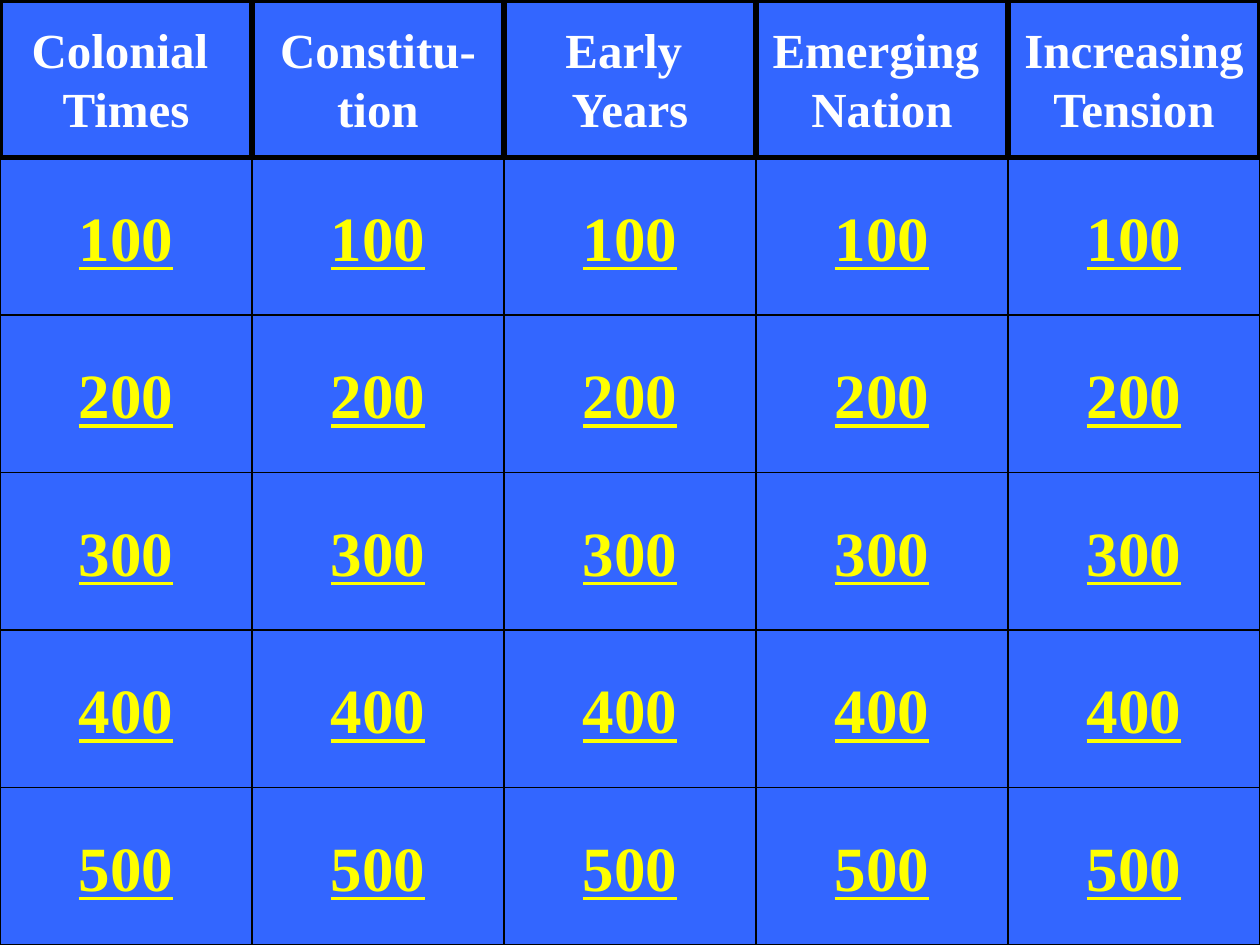
from pptx import Presentation
from pptx.dml.color import RGBColor
from pptx.enum.shapes import MSO_SHAPE
from pptx.enum.text import MSO_ANCHOR, PP_ALIGN
from pptx.util import Emu, Pt

CATEGORIES = [
    ("Colonial ", "Times"),
    ("Constitu-", "tion"),
    ("Early ", "Years"),
    ("Emerging ", "Nation"),
    ("Increasing", "Tension"),
]
POINTS = ["100", "200", "300", "400", "500"]

PX = 9525
BOARD_WIDTH, BOARD_HEIGHT = 960, 720
CELL_WIDTH = BOARD_WIDTH // len(CATEGORIES)
CELL_HEIGHT = BOARD_HEIGHT // (len(POINTS) + 1)

FONT = "Times New Roman"
BLUE, BLACK, WHITE, YELLOW = "3366FF", "000000", "FFFFFF", "FFFF00"
HEADING = {"kind": MSO_SHAPE.RECTANGLE, "border": 3, "size": 28, "ink": WHITE, "underline": False}
BUTTON = {"kind": MSO_SHAPE.ACTION_BUTTON_CUSTOM, "border": 0.75, "size": 36, "ink": YELLOW, "underline": True}


def px(length):
    """Turn px into EMU."""
    return Emu(length * PX)


def paint(color, value):
    """Set a colour from a hex string."""
    color.rgb = RGBColor.from_string(value)


def add_cell(board, column, row, lines, style):
    """Add one cell of the board with its centred lines."""
    cell = board.shapes.add_shape(
        style["kind"], px(column * CELL_WIDTH), px(row * CELL_HEIGHT), px(CELL_WIDTH), px(CELL_HEIGHT)
    )
    cell.shadow.inherit = False
    cell.fill.solid()
    paint(cell.fill.fore_color, BLUE)
    paint(cell.line.color, BLACK)
    cell.line.width = Pt(style["border"])
    frame = cell.text_frame
    frame.word_wrap = False
    frame.vertical_anchor = MSO_ANCHOR.MIDDLE
    for index, line in enumerate(lines):
        paragraph = frame.add_paragraph() if index else frame.paragraphs[0]
        paragraph.alignment = PP_ALIGN.CENTER
        run = paragraph.add_run()
        run.text = line
        run.font.name = FONT
        run.font.size = Pt(style["size"])
        run.font.bold = True
        run.font.underline = style["underline"]
        paint(run.font.color, style["ink"])


def main():
    """Build the quiz board."""
    deck = Presentation()
    deck.slide_width, deck.slide_height = px(BOARD_WIDTH), px(BOARD_HEIGHT)
    board = deck.slides.add_slide(deck.slide_layouts[6])
    board.background.fill.solid()
    paint(board.background.fill.fore_color, BLUE)
    for column in range(len(CATEGORIES)):
        for row, points in enumerate(POINTS, start=1):
            add_cell(board, column, row, [points], BUTTON)
    for column, category in enumerate(CATEGORIES):
        add_cell(board, column, 0, category, HEADING)
    deck.save("out.pptx")


if __name__ == "__main__":
    main()
